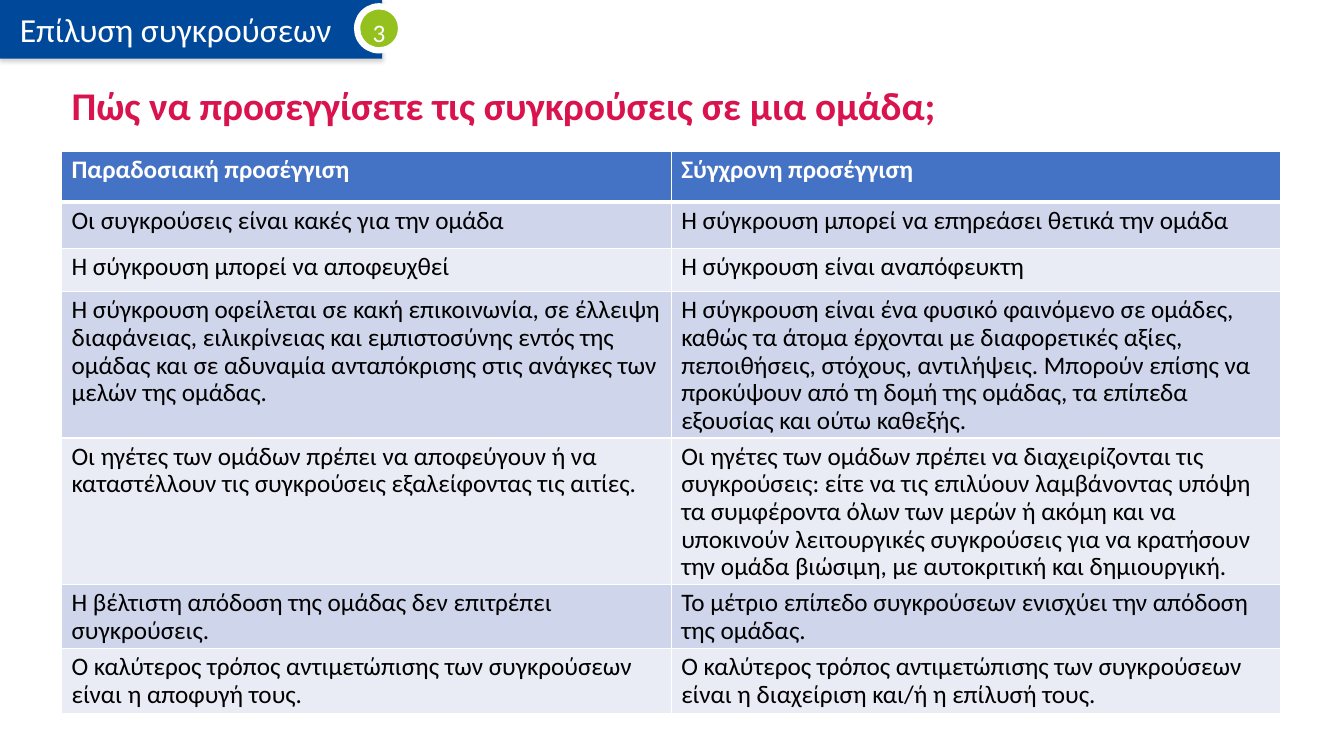
from lxml import etree
from pptx import Presentation
from pptx.dml.color import RGBColor
from pptx.enum.shapes import MSO_SHAPE as SHAPE
from pptx.enum.text import MSO_ANCHOR as ANCHOR, MSO_AUTO_SIZE as AUTO, PP_ALIGN as ALIGN
from pptx.oxml import parse_xml
from pptx.oxml.ns import nsdecls, qn
from pptx.util import Cm, Pt

COLORS = {
    "navy": "004899", "green": "95C11F", "crimson": "D8134D", "header": "4472C4",
    "band": "CFD5EA", "light": "E9EBF5", "white": "FFFFFF", "black": "000000",
    "shadow": "808080",
}

# Text formats
BANNER = {"size": Pt(24), "color": "white", "bold": False}
NUMBER = {"size": Pt(18), "color": "white", "bold": False}
TITLE = {"size": Pt(28), "color": "crimson", "bold": True}
HEAD = {"size": Pt(18), "color": "white", "bold": True}
BODY = {"size": Pt(18), "color": "black", "bold": False}

ROW_HEIGHTS = [1.27, 1.17, 1.09, 3.18, 3.18, 1.27, 1.27]
ROWS = [
    ("Παραδοσιακή προσέγγιση", "Σύγχρονη προσέγγιση"),
    ("Οι συγκρούσεις είναι κακές για την ομάδα",
     "Η σύγκρουση μπορεί να επηρεάσει θετικά την ομάδα"),
    ("Η σύγκρουση μπορεί να αποφευχθεί", "Η σύγκρουση είναι αναπόφευκτη"),
    ("Η σύγκρουση οφείλεται σε κακή επικοινωνία, σε έλλειψη διαφάνειας, ειλικρίνειας και "
     "εμπιστοσύνης εντός της ομάδας και σε αδυναμία ανταπόκρισης στις ανάγκες των μελών "
     "της ομάδας.",
     "Η σύγκρουση είναι ένα φυσικό φαινόμενο σε ομάδες, καθώς τα άτομα έρχονται με "
     "διαφορετικές αξίες, πεποιθήσεις, στόχους, αντιλήψεις. Μπορούν επίσης να προκύψουν "
     "από τη δομή της ομάδας, τα επίπεδα εξουσίας και ούτω καθεξής."),
    ("Οι ηγέτες των ομάδων πρέπει να αποφεύγουν ή να καταστέλλουν τις συγκρούσεις "
     "εξαλείφοντας τις αιτίες.",
     "Οι ηγέτες των ομάδων πρέπει να διαχειρίζονται τις συγκρούσεις: είτε να τις επιλύουν "
     "λαμβάνοντας υπόψη τα συμφέροντα όλων των μερών ή ακόμη και να υποκινούν λειτουργικές "
     "συγκρούσεις για να κρατήσουν την ομάδα βιώσιμη, με αυτοκριτική και δημιουργική."),
    ("Η βέλτιστη απόδοση της ομάδας δεν επιτρέπει συγκρούσεις.",
     "Το μέτριο επίπεδο συγκρούσεων ενισχύει την απόδοση της ομάδας."),
    ("Ο καλύτερος τρόπος αντιμετώπισης των συγκρούσεων είναι η αποφυγή τους.",
     "Ο καλύτερος τρόπος αντιμετώπισης των συγκρούσεων είναι η διαχείριση και/ή η "
     "επίλυσή τους."),
]


def rgb(name):
    return RGBColor.from_string(COLORS[name])


def fill(target, color):
    target.fill.solid()
    target.fill.fore_color.rgb = rgb(color)


def write(tf, text, fmt, spacing=1.0):
    tf.word_wrap = True
    p = tf.paragraphs[0]
    p.alignment = ALIGN.LEFT
    p.line_spacing = spacing
    r = p.add_run()
    r.text = text
    r.font.name = "Calibri"
    for key, value in fmt.items():
        if key == "color":
            r.font.color.rgb = rgb(value)
        else:
            setattr(r.font, key, value)


def add_shape(s, kind, box, color):
    sp = s.shapes.add_shape(kind, *map(Cm, box))
    sp.shadow.inherit = False
    fill(sp, color)
    sp.line.fill.background()
    return sp


def add_shadow(sp):
    effects = sp._element.spPr.find(qn("a:effectLst"))
    shadow = etree.SubElement(effects, qn("a:outerShdw"), blurRad=str(Pt(3.1)),
                              dist=str(Pt(1.8)), dir="5400000", rotWithShape="0")
    color = etree.SubElement(shadow, qn("a:srgbClr"), val=COLORS["shadow"])
    etree.SubElement(color, qn("a:alpha"), val="35000")


def set_borders(cell, top, bottom):
    tcPr = cell._tc.get_or_add_tcPr()
    for i, (side, width) in enumerate({"L": 1, "R": 1, "T": top, "B": bottom}.items()):
        tcPr.insert(i, parse_xml(
            f'<a:ln{side} {nsdecls("a")} w="{Pt(width)}"><a:solidFill>'
            f'<a:srgbClr val="{COLORS["white"]}"/></a:solidFill></a:ln{side}>'))


def add_banner(s):
    sp = add_shape(s, SHAPE.RECTANGLE, (0, 0, 9.63, 1.48), "navy")
    add_shadow(sp)
    tf = sp.text_frame
    tf.margin_left = Cm(0.5)
    tf.vertical_anchor = ANCHOR.MIDDLE
    write(tf, "Επίλυση συγκρούσεων", BANNER)

    # Numbered badge
    badge = add_shape(s, SHAPE.OVAL, (9, 0.16, 1.11, 1.11), "green")
    badge.line.color.rgb = rgb("white")
    badge.line.width = Pt(4.5)
    number = s.shapes.add_textbox(Cm(9.14), Cm(-0.07), Cm(0.9), Cm(1.3))
    write(number.text_frame, "3", NUMBER, 1.5)


def add_title(s):
    sp = s.shapes.title
    for key, value in {"left": 1.55, "top": 1.88, "width": 30.73, "height": 1.68}.items():
        setattr(sp, key, Cm(value))
    tf = sp.text_frame
    tf.auto_size = AUTO.NONE
    tf.vertical_anchor = ANCHOR.MIDDLE
    write(tf, "Πώς να προσεγγίσετε τις συγκρούσεις σε μια ομάδα;", TITLE, 0.9)


def add_comparison(s):
    frame = s.shapes.add_table(len(ROWS), 2, Cm(1.55), Cm(3.82), Cm(30.73), Cm(14.15))
    table = frame.table
    for i, (row, height) in enumerate(zip(ROWS, ROW_HEIGHTS)):
        table.rows[i].height = Cm(height)
        color = "header" if i == 0 else "band" if i % 2 else "light"
        for j, text in enumerate(row):
            cell = table.cell(i, j)
            fill(cell, color)
            set_borders(cell, 3 if i == 1 else 1, 3 if i == 0 else 1)
            write(cell.text_frame, text, BODY if i else HEAD, 0.9)
    frame.height = Cm(14.15)


def main():
    prs = Presentation()
    prs.slide_width, prs.slide_height = Cm(33.87), Cm(19.05)
    s = prs.slides.add_slide(prs.slide_layouts[5])
    add_banner(s)
    add_title(s)
    add_comparison(s)
    prs.save("out.pptx")


if __name__ == "__main__":
    main()
